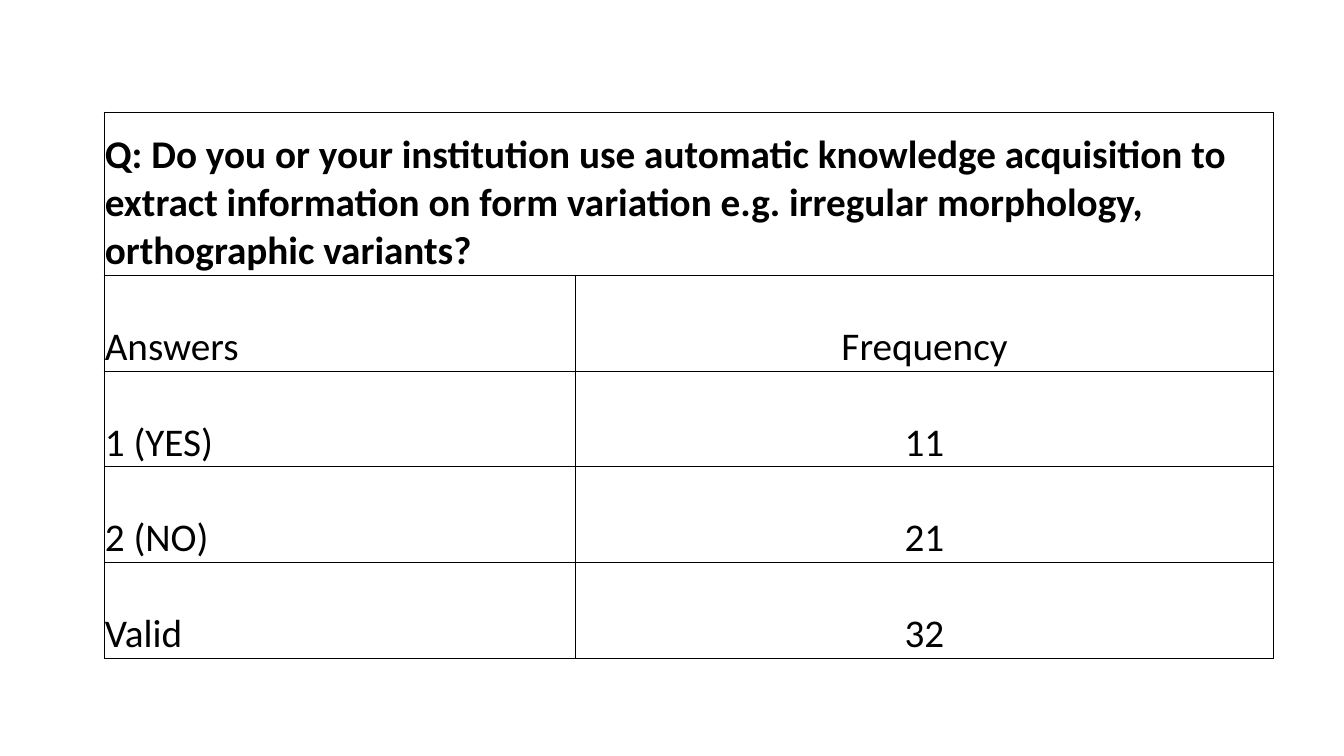
from dataclasses import dataclass

from lxml import etree
from pptx import Presentation
from pptx.dml.color import RGBColor
from pptx.enum.text import MSO_ANCHOR, PP_ALIGN
from pptx.oxml.ns import qn
from pptx.util import Inches, Pt

BOTTOM = MSO_ANCHOR.BOTTOM
LEFT, CENTER = PP_ALIGN.LEFT, PP_ALIGN.CENTER


@dataclass(frozen=True)
class Theme:
    font: str = "Calibri"
    size: float = 28
    ink: str = "000000"
    border: float = 0.5


THEME = Theme()
QUESTION = (
    "Q: Do you or your institution use automatic knowledge acquisition to "
    "extract information on form variation e.g. irregular morphology, "
    "orthographic variants?"
)
ANSWERS = [
    ("Answers", "Frequency"),
    ("1 (YES)", "11"),
    ("2 (NO)", "21"),
    ("Valid", "32"),
]
CELL_FORMAT = {
    "vertical_anchor": BOTTOM,
    "margin_left": Inches(0.01),
    "margin_right": Inches(0.01),
    "margin_top": Inches(0.01),
    "margin_bottom": 0,
}


def apply_format(target, values):
    for name, value in values.items():
        setattr(target, name, value)


def draw_borders(cell):
    properties = cell._tc.get_or_add_tcPr()
    for position, side in enumerate(("a:lnL", "a:lnR", "a:lnT", "a:lnB")):
        line = etree.Element(qn(side), w=str(Pt(THEME.border)))
        fill = etree.SubElement(line, qn("a:solidFill"))
        etree.SubElement(fill, qn("a:srgbClr"), val=THEME.ink)
        properties.insert(position, line)


def write_cell(cell, text, align=LEFT, bold=False):
    para = cell.text_frame.paragraphs[0]
    para.alignment = align
    span = para.add_run()
    span.text = text
    apply_format(span.font, {"name": THEME.font, "size": Pt(THEME.size), "bold": bold})
    span.font.color.rgb = RGBColor.from_string(THEME.ink)


def add_survey_table(page, left, top, width, height):
    answer_width, question_height = 4.68, 1.62
    row_height = (height - question_height) / len(ANSWERS)
    frame = page.shapes.add_table(
        len(ANSWERS) + 1, 2, Inches(left), Inches(top), Inches(width), Inches(height)
    )
    table = frame.table
    apply_format(table, {"first_row": False, "horz_banding": False})
    for column, size in zip(table.columns, (answer_width, width - answer_width)):
        column.width = Inches(size)
    for row in table.rows:
        row.height = Inches(row_height)
    table.rows[0].height = Inches(question_height)

    for cell in table.iter_cells():
        apply_format(cell, CELL_FORMAT)
        cell.fill.background()
        draw_borders(cell)

    table.cell(0, 0).merge(table.cell(0, 1))
    write_cell(table.cell(0, 0), QUESTION, bold=True)
    for row, (answer, frequency) in enumerate(ANSWERS, start=1):
        write_cell(table.cell(row, 0), answer)
        write_cell(table.cell(row, 1), frequency, CENTER)


def main():
    deck = Presentation()
    apply_format(deck, {"slide_width": Inches(13.33), "slide_height": Inches(7.5)})
    page = deck.slides.add_slide(deck.slide_layouts[6])
    add_survey_table(page, 1.03, 1.11, 11.6, 5.42)
    deck.save("out.pptx")


if __name__ == "__main__":
    main()
